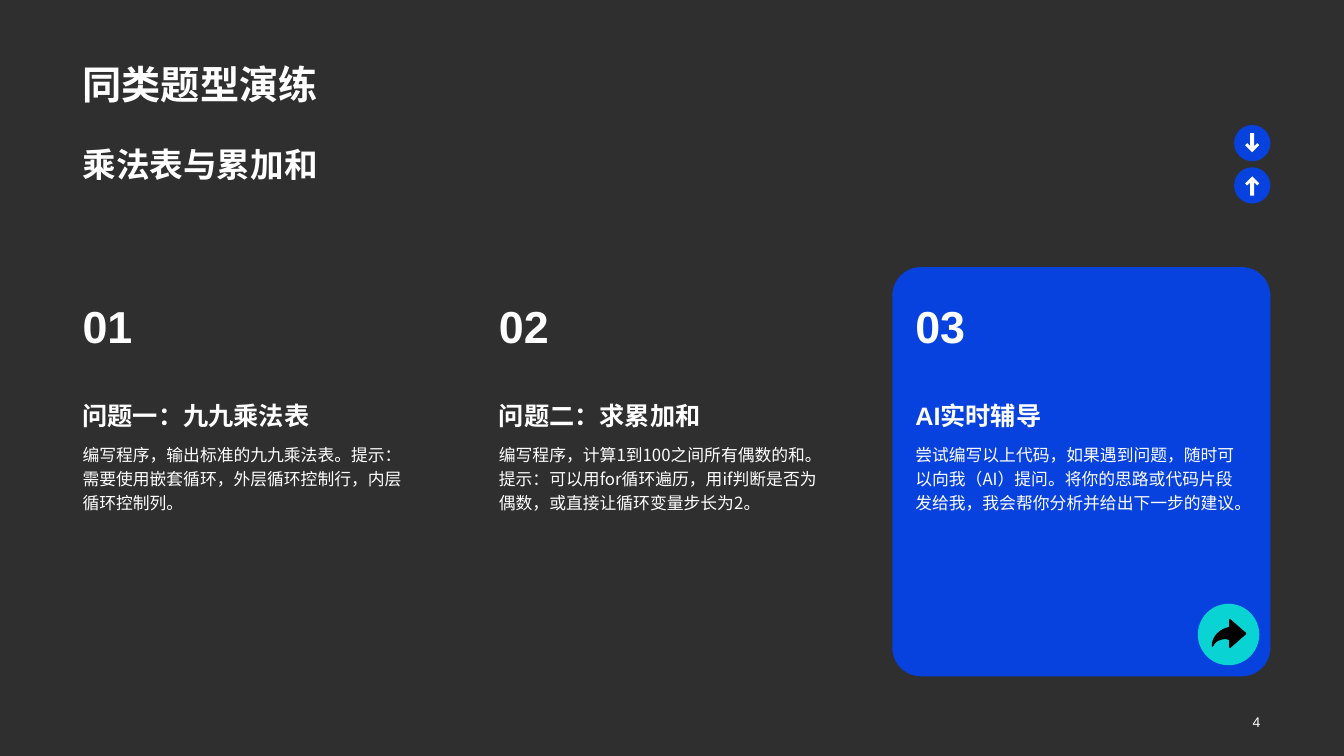
from lxml import etree
from pptx import Presentation
from pptx.dml.color import RGBColor
from pptx.enum.shapes import MSO_SHAPE
from pptx.enum.text import MSO_ANCHOR, PP_ALIGN
from pptx.oxml.ns import qn
from pptx.util import Inches, Pt

TOP, MIDDLE, BOTTOM = MSO_ANCHOR.TOP, MSO_ANCHOR.MIDDLE, MSO_ANCHOR.BOTTOM
LEFT, RIGHT = PP_ALIGN.LEFT, PP_ALIGN.RIGHT
OVAL, ROUNDED = MSO_SHAPE.OVAL, MSO_SHAPE.ROUNDED_RECTANGLE
COLORS = {"ground": "2F2F2F", "blue": "0742DF", "cyan": "09D3D3",
          "white": "FFFFFF", "black": "000000"}
CJK, LATIN = "Noto Sans CJK SC", "Arial"

# Slide grid in inches
WIDTH, HEIGHT = 13.33, 7.5
MARGIN, CONTENT_RIGHT = 0.72, 12.6
COLUMN_PITCH, COLUMN_WIDTH = 4.13, 3.49
COLUMN_TOP = 2.88

COLUMNS = [
    ("01", "问题一：九九乘法表", CJK,
     "编写程序，输出标准的九九乘法表。提示：需要使用嵌套循环，外层循环控制行，内层循环控制列。"),
    ("02", "问题二：求累加和", CJK,
     "编写程序，计算1到100之间所有偶数的和。提示：可以用for循环遍历，用if判断是否为偶数，"
     "或直接让循环变量步长为2。"),
    ("03", "AI实时辅导", LATIN,
     "尝试编写以上代码，如果遇到问题，随时可以向我（AI）提问。将你的思路或代码片段发给我，"
     "我会帮你分析并给出下一步的建议。"),
]


def bezier(start, first, second, end, steps=10):
    """Points along a cubic curve, both ends included."""
    points = []
    for step in range(steps + 1):
        t = step / steps
        weights = ((1 - t) ** 3, 3 * t * (1 - t) ** 2, 3 * t * t * (1 - t), t ** 3)
        curve = list(zip(weights, (start, first, second, end)))
        points.append((sum(w * p[0] for w, p in curve), sum(w * p[1] for w, p in curve)))
    return points


# Icon outlines, on a square grid that spans the badge
DOWN_GRID = 36
DOWN_ARROW = [(11, 20), (18, 27), (25, 20), (23, 18), (20, 21), (20, 8),
              (16, 8), (16, 21), (13, 18)]
SHARE_GRID = 61
SHARE_ARROW = (bezier((31, 23), (21, 25), (14, 33), (14, 41))
               + [(14, 43), (15, 42)]
               + bezier((16, 41), (17, 38), (22, 35), (28, 35))
               + [(31, 36), (31, 43), (32, 44), (48, 30), (48, 29), (32, 15), (31, 16)])


def paint(shape, color):
    shape.shadow.inherit = False
    shape.fill.solid()
    shape.fill.fore_color.rgb = RGBColor.from_string(COLORS[color])
    shape.line.fill.background()


def write(shape, text, size, latin=CJK, bold=False, anchor=TOP, align=LEFT, spacing=1.0):
    frame = shape.text_frame
    frame.word_wrap = True
    frame.vertical_anchor = anchor
    para = frame.paragraphs[0]
    para.text = text
    para.alignment = align
    para.line_spacing = spacing
    font = para.font
    font.size, font.bold, font.name = Pt(size), bold, latin
    font.color.rgb = RGBColor.from_string(COLORS["white"])
    # East Asian typeface follows the Latin one
    properties = para._p.pPr.find(qn("a:defRPr"))
    etree.SubElement(properties, qn("a:ea")).set("typeface", CJK)


def add_text(page, box, text, size, **style):
    write(page.shapes.add_textbox(*map(Inches, box)), text, size, **style)


def add_badge(page, left, top, diameter, fill, outline, grid, ink, flipped=False):
    box = [Inches(value) for value in (left, top, diameter, diameter)]
    paint(page.shapes.add_shape(OVAL, *box), fill)
    points = [(box[0] + box[2] * x / grid,
               box[1] + box[3] * (grid - y if flipped else y) / grid)
              for x, y in outline]
    builder = page.shapes.build_freeform(*points[0])
    builder.add_line_segments(points[1:], close=True)
    paint(builder.convert_to_shape(), ink)


def add_header(page, left, top, width):
    # Title placeholder
    title = page.shapes.title
    title.left, title.top = Inches(left), Inches(top)
    title.width, title.height = Inches(width), Inches(0.98)
    write(title, "同类题型演练", 28, bold=True, anchor=BOTTOM)
    # Subtitle with the two badges at its right
    subtitle_top, diameter, pitch = top + 1.1, 0.36, 0.42
    add_text(page, (left, subtitle_top, width - 0.56, 0.78), "乘法表与累加和", 24,
             bold=True, anchor=MIDDLE)
    for row, flipped in enumerate((False, True)):
        add_badge(page, left + width - diameter, subtitle_top + row * pitch, diameter,
                  "blue", DOWN_ARROW, DOWN_GRID, "white", flipped)


def add_card(page, left, top, width, height):
    card = page.shapes.add_shape(ROUNDED, *map(Inches, (left, top, width, height)))
    card.adjustments[0] = 0.076
    paint(card, "blue")
    diameter, gap = 0.61, 0.11
    add_badge(page, left + width - diameter - gap, top + height - diameter - gap,
              diameter, "cyan", SHARE_ARROW, SHARE_GRID, "black")


def add_column(page, left, top, width, number, heading, heading_font, body):
    add_text(page, (left, top, 1.28, 0.67), number, 32,
             latin=LATIN, bold=True, anchor=BOTTOM)
    add_text(page, (left, top + 0.77, width, 0.67), heading, 18,
             latin=heading_font, bold=True, anchor=BOTTOM)
    add_text(page, (left, top + 1.44, width, 1.64), body, 12, spacing=1.2)


def build_practice_slide(deck):
    page = deck.slides.add_slide(deck.slide_layouts[5])
    ground = page.background.fill
    ground.solid()
    ground.fore_color.rgb = RGBColor.from_string(COLORS["ground"])
    add_header(page, MARGIN, 0.14, CONTENT_RIGHT - MARGIN)
    # Card behind the last column
    add_card(page, 8.85, 2.65, 3.75, 4.06)
    for index, column in enumerate(COLUMNS):
        add_column(page, MARGIN + index * COLUMN_PITCH, COLUMN_TOP, COLUMN_WIDTH, *column)
    # Page number
    add_text(page, (CONTENT_RIGHT - 4, 7.01, 4, 0.3), "4", 10,
             latin=LATIN, anchor=MIDDLE, align=RIGHT)


def main():
    deck = Presentation()
    deck.slide_width, deck.slide_height = Inches(WIDTH), Inches(HEIGHT)
    build_practice_slide(deck)
    deck.save("out.pptx")


if __name__ == "__main__":
    main()
